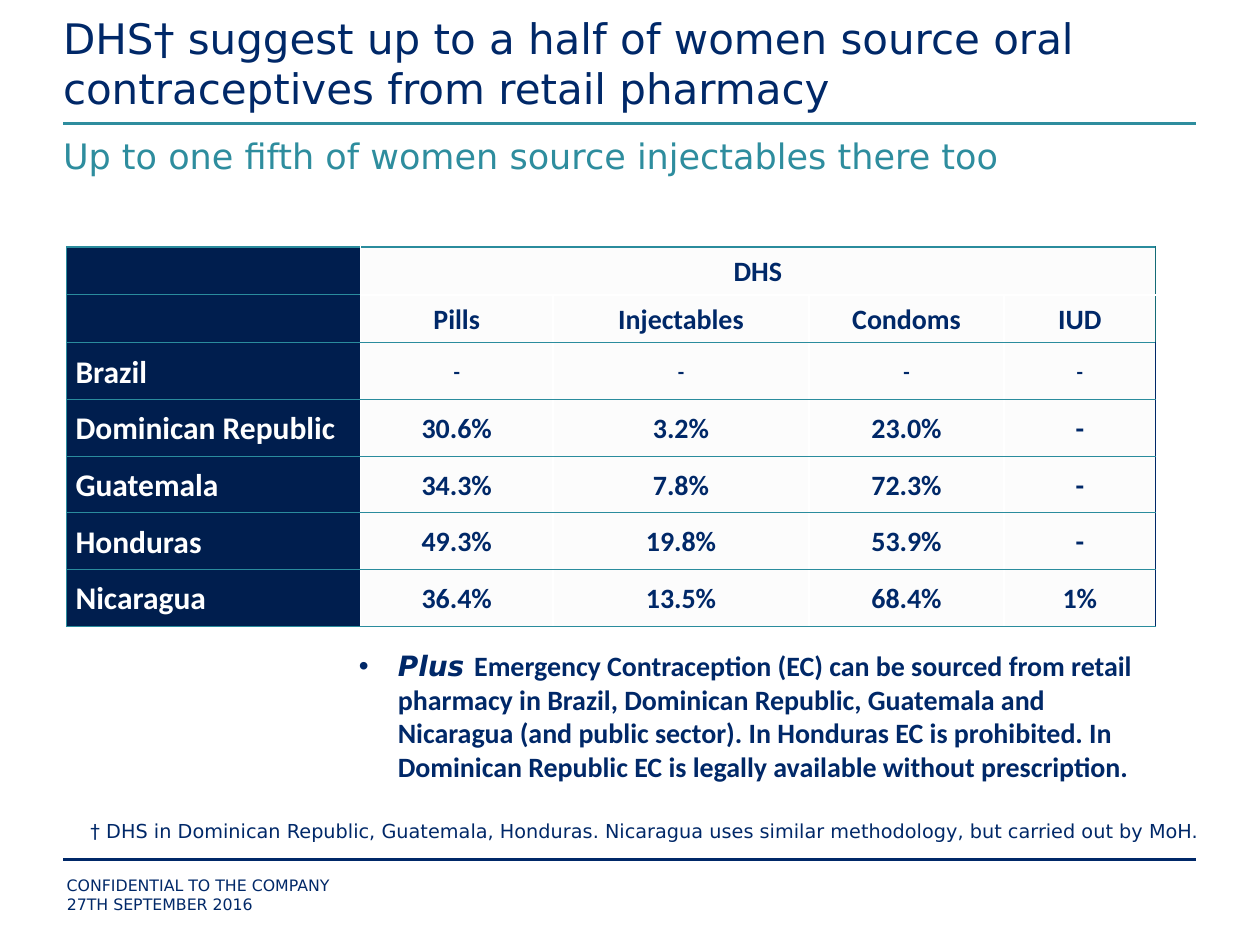
from pptx import Presentation, util as u
from pptx.dml.color import RGBColor
from pptx.enum import shapes, text
from pptx.oxml import parse_xml
from pptx.oxml.ns import nsdecls, qn
from lxml import etree

TITLE = "DHS† suggest up to a half of women source oral contraceptives from retail pharmacy"
SUBTITLE = "Up to one fifth of women source injectables there too"
ROWS = [
    ("", "DHS", "", "", ""),
    ("", "Pills", "Injectables", "Condoms", "IUD"),
    ("Brazil", "-", "-", "-", "-"),
    ("Dominican Republic", "30.6%", "3.2%", "23.0%", "-"),
    ("Guatemala", "34.3%", "7.8%", "72.3%", "-"),
    ("Honduras", "49.3%", "19.8%", "53.9%", "-"),
    ("Nicaragua", "36.4%", "13.5%", "68.4%", "1%"),
]
COLUMN_WIDTHS = (2.33, 1.53, 2.03, 1.55, 1.2)
ROW_HEIGHTS = (0.38,) * 2 + (0.45,) * 5
HEADER_ROWS = 2
NO_DATA_ROW = 2
NOTE_LEAD = "Plus "
NOTE = ("Emergency Contraception (EC) can be sourced from retail pharmacy in Brazil, "
        "Dominican Republic, Guatemala and Nicaragua (and public sector). In Honduras EC is "
        "prohibited. In Dominican Republic EC is legally available without prescription.")
SMALL_PRINT = [
    ("† DHS in Dominican Republic, Guatemala, Honduras. Nicaragua uses similar methodology, "
     "but carried out by MoH.", (0.62, 6.45, 9.14, 0.29), "footnote", None),
    ("CONFIDENTIAL TO THE COMPANY", (0.53, 6.95, 7.5, 0.15), "footer", 0),
    ("27TH SEPTEMBER 2016", (0.53, 7.1, 7.25, 0.15), "footer", 0),
]
THEME = {
    "sans": "DejaVu Sans", "table_font": "Calibri",
    "navy": "002868", "dark": "001E4E", "teal": "2E8D9E", "grid": "2A8C9D",
    "edge": "146B76", "white": "FFFFFF", "pale": "F8F8F8", "pale_alpha": 29,
    "title": 24, "subtitle": 20, "country": 18, "value": 16, "no_data": 12,
    "note": 16, "footnote": 11, "footer": 9,
}


def style(font, size, color="navy", face="sans", bold=None):
    font.size = u.Pt(THEME[size])
    font.name = THEME[face]
    font.color.rgb = RGBColor.from_string(THEME[color])
    font.bold = bold


def place(shape, left, top, width, height):
    shape.left, shape.top = u.Inches(left), u.Inches(top)
    shape.width, shape.height = u.Inches(width), u.Inches(height)


def set_margins(target, side, vertical):
    target.margin_left = target.margin_right = u.Inches(side)
    target.margin_top = target.margin_bottom = u.Inches(vertical)


def add_rule(slide, top, color):
    rule = slide.shapes.add_connector(shapes.MSO_CONNECTOR.STRAIGHT, u.Inches(0.5),
                                      u.Inches(top), u.Inches(9.49), u.Inches(top))
    rule.line.color.rgb = RGBColor.from_string(THEME[color])
    rule.line.width = u.Pt(1.5)
    etree.SubElement(rule._element.spPr, qn("a:effectLst"))


def add_text(slide, box, margin=None):
    frame = slide.shapes.add_textbox(*map(u.Inches, box)).text_frame
    frame.word_wrap = True
    if margin is not None:
        set_margins(frame, margin, margin)
    return frame


def fill_placeholder(placeholder, box, words, size, color, anchor):
    place(placeholder, *box)
    frame = placeholder.text_frame
    frame.auto_size = text.MSO_AUTO_SIZE.NONE
    frame.vertical_anchor = anchor
    set_margins(frame, 0, 0)
    frame.text = words
    paragraph = frame.paragraphs[0]
    paragraph.alignment = text.PP_ALIGN.LEFT
    paragraph.space_before = u.Pt(0)
    properties = paragraph._p.get_or_add_pPr()
    properties.set("marL", "0")
    properties.set("indent", "0")
    etree.SubElement(properties, qn("a:buNone"))
    style(paragraph.font, size, color)


def cell_borders(row, column):
    header = row < HEADER_ROWS
    last_column = column == len(COLUMN_WIDTHS) - 1
    merged_edge = column > 0
    borders = {
        "T": "white" if merged_edge and row == 1 else "grid",
        "B": "white" if merged_edge and row == 0 else "grid",
    }
    if column == 0:
        borders.update(L="grid", R="white")
    elif column == 1 or header:
        borders["L"] = "white"
    if last_column or (header and row == 0 and column > 0):
        borders["R"] = "edge" if header else "navy"
    elif header and column > 0:
        borders["R"] = "white"
    return borders


def draw_borders(cell, borders):
    properties = cell._tc.get_or_add_tcPr()
    sides = [side for side in "LRTB" if side in borders]
    for position, side in enumerate(sides):
        color = borders[side]
        width = u.Pt(0.75 if color == "grid" else 1)
        properties.insert(position, parse_xml(
            f'<a:ln{side} {nsdecls("a")} w="{width}"><a:solidFill>'
            f'<a:srgbClr val="{THEME[color]}"/></a:solidFill></a:ln{side}>'))


def fill_cell(cell, row, column, words):
    set_margins(cell, 0.07, 0)
    cell.vertical_anchor = text.MSO_ANCHOR.MIDDLE
    cell.fill.solid()
    cell.fill.fore_color.rgb = RGBColor.from_string(THEME["pale" if column else "dark"])
    if column:
        color = cell._tc.tcPr.find(".//" + qn("a:srgbClr"))
        etree.SubElement(color, qn("a:alpha"), val=str(THEME["pale_alpha"] * 1000))
    draw_borders(cell, cell_borders(row, column))
    if not words:
        return
    cell.text = words
    paragraph = cell.text_frame.paragraphs[0]
    paragraph.line_spacing = 1.07
    paragraph.alignment = text.PP_ALIGN.CENTER if column else text.PP_ALIGN.LEFT
    if column:
        size = "no_data" if row == NO_DATA_ROW else "value"
        style(paragraph.font, size, "navy", "table_font", True)
    else:
        style(paragraph.font, "country", "white", "table_font", True)


def add_source_table(slide):
    table = slide.shapes.add_table(
        len(ROWS), len(COLUMN_WIDTHS), u.Inches(0.53), u.Inches(1.96),
        u.Inches(sum(COLUMN_WIDTHS)), u.Inches(sum(ROW_HEIGHTS))).table
    table.horz_banding = False
    for column, width in zip(table.columns, COLUMN_WIDTHS):
        column.width = u.Inches(width)
    for row, height in zip(table.rows, ROW_HEIGHTS):
        row.height = u.Inches(height)
    table.cell(0, 1).merge(table.cell(0, len(COLUMN_WIDTHS) - 1))
    for row, values in enumerate(ROWS):
        for column, words in enumerate(values):
            fill_cell(table.cell(row, column), row, column, words)


def add_note(slide):
    paragraph = add_text(slide, (2.75, 5.1, 6.44, 1.18)).paragraphs[0]
    paragraph.space_after = u.Pt(6)
    properties = paragraph._p.get_or_add_pPr()
    properties.set("marL", str(u.Inches(0.31)))
    properties.set("indent", str(-u.Inches(0.31)))
    etree.SubElement(properties, qn("a:buFont"), typeface="Arial")
    etree.SubElement(properties, qn("a:buChar"), char="•")
    for words, face, italic in ((NOTE_LEAD, "sans", True), (NOTE, "table_font", False)):
        run = paragraph.add_run()
        run.text = words
        style(run.font, "note", "navy", face, True)
        run.font.italic = italic


def main():
    deck = Presentation()
    deck.slide_width, deck.slide_height = u.Inches(10), u.Inches(7.5)
    slide = deck.slides.add_slide(deck.slide_layouts[1])
    add_rule(slide, 0.98, "teal")
    add_rule(slide, 6.82, "navy")
    add_source_table(slide)
    fill_placeholder(slide.shapes.title, (0.5, 0, 9, 0.9), TITLE,
                     "title", "navy", text.MSO_ANCHOR.BOTTOM)
    fill_placeholder(slide.placeholders[1], (0.5, 1.07, 9, 0.49), SUBTITLE,
                     "subtitle", "teal", text.MSO_ANCHOR.TOP)
    add_note(slide)
    for words, box, size, margin in SMALL_PRINT:
        paragraph = add_text(slide, box, margin).paragraphs[0]
        paragraph.text = words
        style(paragraph.font, size)
    deck.save("out.pptx")


if __name__ == "__main__":
    main()
